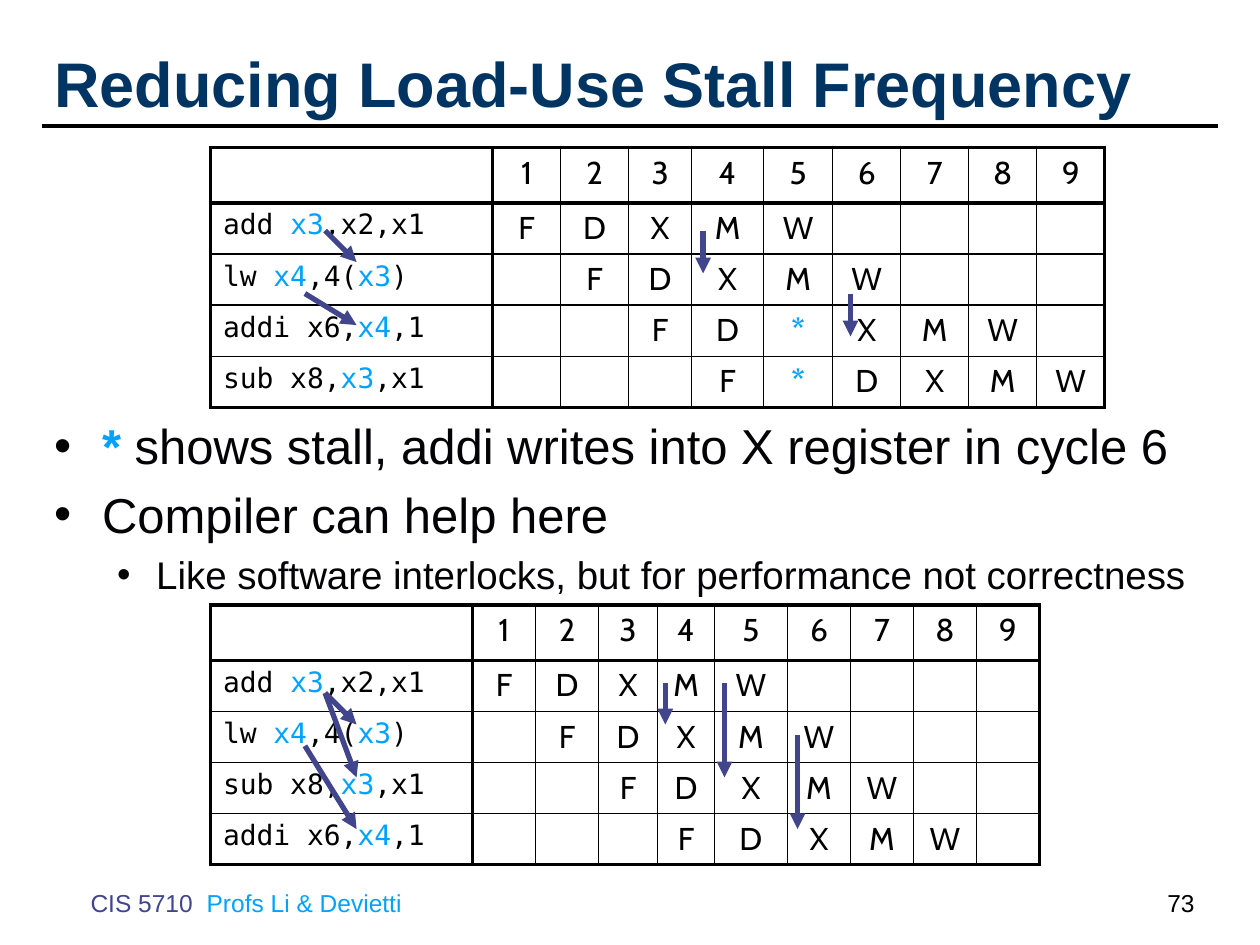
"""Build a slide comparing two pipeline schedules around a load-use stall."""
from lxml.etree import SubElement
from pptx import Presentation
from pptx.dml.color import RGBColor
from pptx.enum.shapes import MSO_CONNECTOR
from pptx.enum.text import MSO_ANCHOR, MSO_AUTO_SIZE, PP_ALIGN
from pptx.oxml.ns import qn
from pptx.util import Inches, Pt

BLACK = RGBColor(0x00, 0x00, 0x00)
INK = RGBColor(0x03, 0x03, 0x05)
NAVY = RGBColor(0x00, 0x34, 0x62)
INDIGO = RGBColor(0x40, 0x45, 0x8C)
SKY = RGBColor(0x00, 0xA2, 0xFF)

BULLETS = [
    (0, "|*| shows stall, addi writes into X register in cycle 6"),
    (0, "Compiler can help here"),
    (1, "Like software interlocks, but for performance not correctness"),
]
LEVELS = [
    {"size": 28, "left": 0.38, "hang": 0.38},
    {"size": 22, "left": 0.81, "hang": 0.31},
]

ADD, LW = "add |x3|,x2,x1", "lw |x4|,4(|x3|)"
ADDI, SUB = "addi x6,|x4|,1", "sub x8,|x3|,x1"
STALLED = [(ADD, 1, "FDXMW"), (LW, 2, "FDXMW"),
           (ADDI, 3, "FD*XMW"), (SUB, 4, "F*DXMW")]
REORDERED = [(ADD, 1, "FDXMW"), (LW, 2, "FDXMW"),
             (SUB, 3, "FDXMW"), (ADDI, 4, "FDXMW")]
STALLED_COLS = [2.24, 0.54, 0.54, 0.5, 0.57, 0.55] + [0.54] * 4
REORDERED_COLS = [2.08, 0.5, 0.5, 0.47, 0.45, 0.58] + [0.5] * 4

FORWARDING = [
    (5.58, 1.83, 5.58, 2.17), (6.75, 2.33, 6.75, 2.67),
    (5.28, 5.42, 5.28, 5.75), (5.75, 5.42, 5.75, 6.17),
    (6.33, 5.83, 6.33, 6.58),
]
DEPENDENCES = [
    (2.58, 1.83, 2.83, 2.08), (2.42, 2.33, 2.83, 2.58),
    (2.58, 5.5, 2.83, 5.75), (2.58, 5.5, 2.83, 6.17),
    (2.42, 5.92, 2.83, 6.58),
]


class SlideBuilder:
    """Hold the style and the current slide."""

    code = {"name": "DejaVu Sans Mono", "size": Pt(16)}
    stage = {"name": "Cabin", "size": Pt(18)}
    thick, thin = 2.25, 0.75

    def __init__(self, prs):
        self.s = prs.slides.add_slide(prs.slide_layouts[1])

    def runs(self, p, text, color, fmt, accent_bold=False):
        """Write text in which every second part between bars is accented."""
        for i, part in enumerate(text.split("|")):
            if not part:
                continue
            r = p.add_run()
            r.text = part
            for key, value in fmt.items():
                setattr(r.font, key, value)
            r.font.color.rgb = SKY if i % 2 else color
            if i % 2 and accent_bold:
                r.font.bold = True

    def place(self, sp, box, anchor):
        """Position a shape and prepare its text frame."""
        for key, value in zip(("left", "top", "width", "height"), box):
            setattr(sp, key, Inches(value))
        tf = sp.text_frame
        frame = {"word_wrap": True, "auto_size": MSO_AUTO_SIZE.NONE,
                 "vertical_anchor": anchor}
        for key, value in frame.items():
            setattr(tf, key, value)
        return tf

    def title(self, text, box):
        """Fill the title placeholder."""
        p = self.place(self.s.shapes.title, box, MSO_ANCHOR.BOTTOM).paragraphs[0]
        p.alignment = PP_ALIGN.LEFT
        self.runs(p, text, NAVY, {"name": "Arial", "size": Pt(36), "bold": True})

    def body(self, items, box):
        """Fill the body placeholder with a bulleted list."""
        tf = self.place(self.s.placeholders[1], box, MSO_ANCHOR.TOP)
        for i, (level, text) in enumerate(items):
            p = tf.add_paragraph() if i else tf.paragraphs[0]
            style = LEVELS[level]
            p.level = level
            p.space_before = Pt(style["size"] * 0.2)
            pPr = p._p.get_or_add_pPr()
            pPr.set("marL", str(Inches(style["left"])))
            pPr.set("indent", str(-Inches(style["hang"])))
            color = SubElement(pPr, qn("a:buClr"))
            SubElement(color, qn("a:srgbClr"), val=str(INK))
            SubElement(pPr, qn("a:buChar"), char="•")
            fmt = {"name": "Arial", "size": Pt(style["size"])}
            self.runs(p, text, INK, fmt, accent_bold=True)

    def label(self, text, box, color, align):
        """Add a footer text box."""
        sp = self.s.shapes.add_textbox(0, 0, 0, 0)
        p = self.place(sp, box, MSO_ANCHOR.BOTTOM).paragraphs[0]
        p.alignment = align
        self.runs(p, text, color, {"name": "Arial", "size": Pt(14)})

    def line(self, ends, color, width, arrow=False):
        """Add a straight line, with an arrowhead at its end if asked."""
        sp = self.s.shapes.add_connector(
            MSO_CONNECTOR.STRAIGHT, *(Inches(v) for v in ends))
        sp.line.color.rgb = color
        sp.line.width = Pt(width)
        if arrow:
            SubElement(sp.line._get_or_add_ln(), qn("a:tailEnd"), type="triangle")
        SubElement(sp._element.spPr, qn("a:effectLst"))

    def borders(self, cell, row, col, last_row, last_col):
        """Draw thick rules round the table, its header and first column."""
        heavy = {"L": col <= 1, "R": col in (0, last_col),
                 "T": row <= 1, "B": row in (0, last_row)}
        tcPr = cell._tc.get_or_add_tcPr()
        for i, (side, is_heavy) in enumerate(heavy.items()):
            width = Pt(self.thick if is_heavy else self.thin)
            ln = tcPr.makeelement(qn(f"a:ln{side}"), {"w": str(width)})
            fill = SubElement(ln, qn("a:solidFill"))
            SubElement(fill, qn("a:srgbClr"), val=str(BLACK))
            tcPr.insert(i, ln)

    def pipeline(self, left, top, widths, program):
        """Add a table of instructions against clock cycles."""
        cycles = len(widths) - 1
        grid = [[""] + [str(n + 1) for n in range(cycles)]]
        for code, start, stages in program:
            cells = [""] * (start - 1) + list(stages.replace("*", "*"))
            grid.append([code] + cells + [""] * (cycles - len(cells)))
        heights = [0.44] + [0.4] * len(program)
        table = self.s.shapes.add_table(
            len(grid), len(widths), Inches(left), Inches(top),
            Inches(sum(widths)), Inches(sum(heights))).table
        table.first_row = table.horz_banding = False
        for column, width in zip(table.columns, widths):
            column.width = Inches(width)
        for r, (row, height) in enumerate(zip(table.rows, heights)):
            row.height = Inches(height)
            for c, cell in enumerate(row.cells):
                cell.fill.background()
                self.borders(cell, r, c, len(program), cycles)
                p = cell.text_frame.paragraphs[0]
                p.alignment = PP_ALIGN.CENTER if c else PP_ALIGN.LEFT
                text = "|*|" if grid[r][c] == "*" else grid[r][c]
                self.runs(p, text, BLACK, self.stage if c else self.code, c > 0)


def main():
    prs = Presentation()
    prs.slide_width, prs.slide_height = Inches(10), Inches(7.5)
    b = SlideBuilder(prs)
    b.line((0.33, 1, 9.67, 1), BLACK, 2.25)
    b.title("Reducing Load-Use Stall Frequency", (0.33, 0.25, 9.33, 0.75))
    b.body(BULLETS, (0.33, 3.25, 9.5, 3.58))
    b.label("CIS 5710 | Profs Li & Devietti", (0.62, 7, 6.25, 0.33),
            INDIGO, PP_ALIGN.LEFT)
    b.label("73", (7.5, 7, 2.08, 0.33), BLACK, PP_ALIGN.RIGHT)
    b.pipeline(1.67, 1.17, STALLED_COLS, STALLED)
    b.pipeline(1.67, 4.8, REORDERED_COLS, REORDERED)
    for ends in FORWARDING + DEPENDENCES:
        b.line(ends, INDIGO, 3, arrow=True)
    prs.save("out.pptx")


if __name__ == "__main__":
    main()
